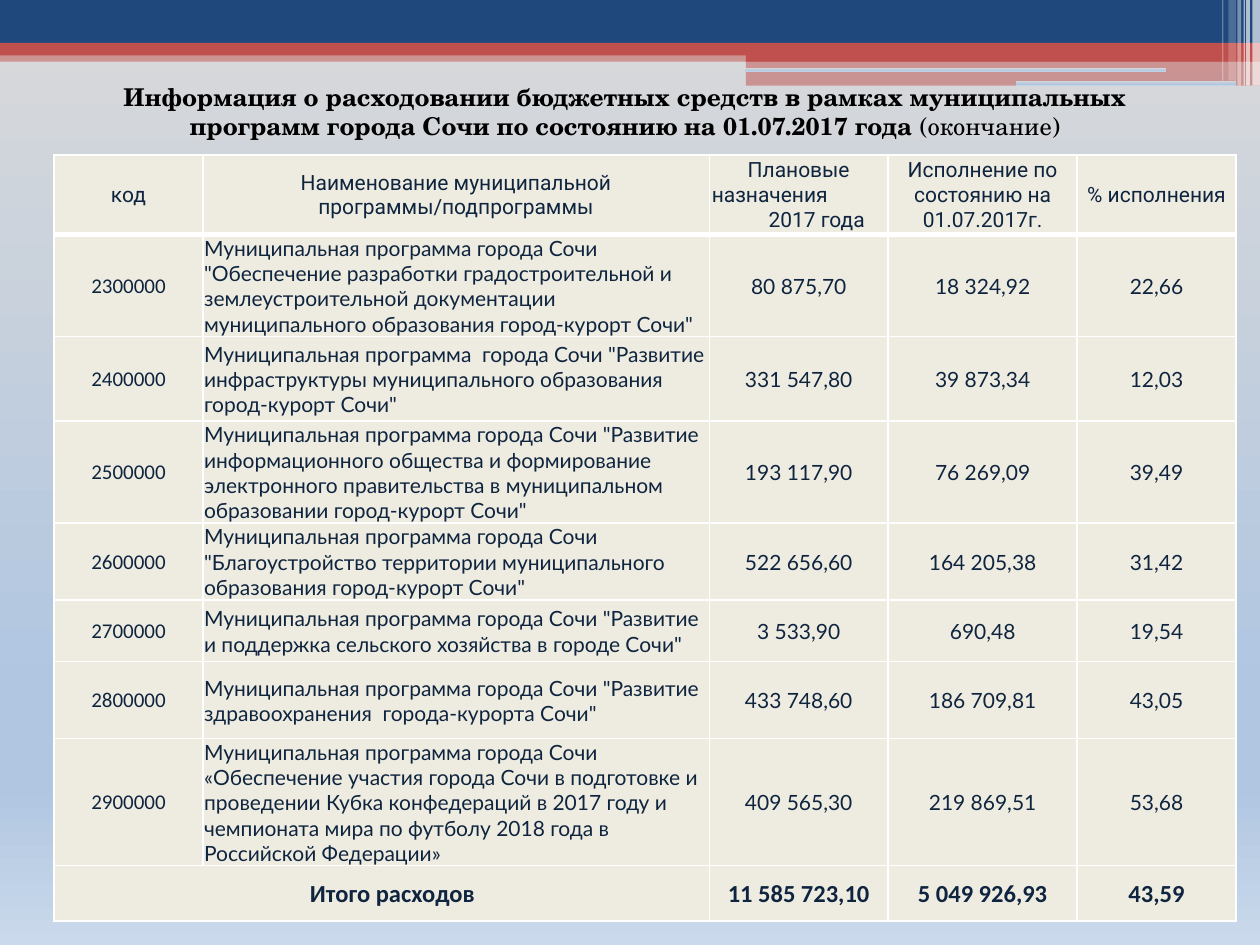
import pptx
import pptx.util
import pptx.dml.color
import pptx.enum.shapes
import pptx.enum.text
import pptx.oxml
import pptx.oxml.ns

RGBColor = pptx.dml.color.RGBColor
NAVY = RGBColor(0x1F, 0x49, 0x7D)
RED = RGBColor(0xC0, 0x50, 0x4D)
WHITE = RGBColor(0xFF, 0xFF, 0xFF)
BLACK = RGBColor(0, 0, 0)
CREAM = RGBColor(0xEE, 0xEC, 0xE1)
INK = RGBColor(0x0F, 0x24, 0x3E)
GRADIENT = [(0, RGBColor(0xD9, 0xD9, 0xD9)), (74, RGBColor(0xB0, 0xC6, 0xE1)),
            (83, RGBColor(0xB0, 0xC6, 0xE1)), (100, RGBColor(0xCA, 0xD9, 0xEB))]

SHAPE = pptx.enum.shapes.MSO_SHAPE
LEFT = pptx.enum.text.PP_ALIGN.LEFT
CENTER = pptx.enum.text.PP_ALIGN.CENTER
MIDDLE = pptx.enum.text.MSO_ANCHOR.MIDDLE
qn = pptx.oxml.ns.qn
NAMESPACE = pptx.oxml.ns.nsdecls("a")

HEADERS = ["код", "Наименование муниципальной программы/подпрограммы", None,
           "Исполнение по состоянию на 01.07.2017г.", "% исполнения"]
# The planned-amounts header is stepped: text, alignment, left indent in inches
PLAN_HEADER = [("Плановые", CENTER, 0), ("назначения", LEFT, 0.01), ("2017 года", LEFT, 0.46)]
PREFIX = "Муниципальная программа города Сочи "
PROGRAMS = [
    ("2300000", PREFIX + '"Обеспечение разработки градостроительной и землеустроительной '
     'документации муниципального образования город-курорт Сочи"', "80 875,70", "18 324,92", "22,66"),
    ("2400000", 'Муниципальная программа  города Сочи "Развитие инфраструктуры муниципального '
     'образования город-курорт Сочи"', "331 547,80", "39 873,34", "12,03"),
    ("2500000", PREFIX + '"Развитие информационного общества и формирование электронного '
     'правительства в муниципальном образовании город-курорт Сочи"',
     "193 117,90", "76 269,09", "39,49"),
    ("2600000", PREFIX + '"Благоустройство территории муниципального образования '
     'город-курорт Сочи"', "522 656,60", "164 205,38", "31,42"),
    ("2700000", PREFIX + '"Развитие и поддержка сельского хозяйства в городе Сочи"',
     "3 533,90", "690,48", "19,54"),
    ("2800000", PREFIX + '"Развитие здравоохранения  города-курорта Сочи"',
     "433 748,60", "186 709,81", "43,05"),
    ("2900000", PREFIX + "«Обеспечение участия города Сочи в подготовке и проведении Кубка "
     "конфедераций в 2017 году и чемпионата мира по футболу 2018 года в Российской Федерации»",
     "409 565,30", "219 869,51", "53,68"),
]
TOTALS = ["Итого расходов", None, "11 585 723,10", "5 049 926,93", "43,59"]


def write(para, text, font="Lato", size=12, color=INK, bold=False, align=CENTER, indent=0):
    """Add one formatted span to a paragraph."""
    para.alignment = align
    if indent:
        para._p.get_or_add_pPr().set("marL", str(pptx.util.Inches(indent)))
    span = para.add_run()
    span.text = text
    span.font.name = font
    span.font.size = pptx.util.Pt(size)
    span.font.bold = bold
    span.font.color.rgb = color


class Builder:
    """Holds the style and the page; lengths are in a grid of 100 columns by 75 rows."""

    def __init__(self, deck):
        self.column = deck.slide_width / 100
        self.row = deck.slide_height / 75
        self.page = deck.slides.add_slide(deck.slide_layouts[5])

    def across(self, columns):
        return round(columns * self.column)

    def down(self, rows):
        return round(rows * self.row)

    def place(self, left, top, width, height):
        return self.across(left), self.down(top), self.across(width), self.down(height)

    def gradient(self, fill, element):
        fill.gradient()
        fill.gradient_angle = 270
        stops = element.find(".//" + qn("a:gsLst"))
        for stop in list(stops):
            stops.remove(stop)
        for position, color in GRADIENT:
            stops.append(pptx.oxml.parse_xml(
                f'<a:gs {NAMESPACE} pos="{position * 1000}"><a:srgbClr val="{color}"/></a:gs>'))

    def background(self):
        self.gradient(self.page.background.fill, self.page._element)

    def bar(self, bounds, color=None, opacity=100, kind=SHAPE.RECTANGLE):
        box = self.page.shapes.add_shape(kind, *self.place(*bounds))
        box.shadow.inherit = False
        box.line.fill.background()
        if color is None:
            self.gradient(box.fill, box._element)
            return
        box.fill.solid()
        box.fill.fore_color.rgb = color
        if opacity < 100:
            tint = box._element.spPr.find(".//" + qn("a:srgbClr"))
            tint.append(pptx.oxml.parse_xml(f'<a:alpha {NAMESPACE} val="{opacity * 1000}"/>'))

    def title(self, bounds, strong, plain):
        box = self.page.shapes.title
        box.left, box.top, box.width, box.height = self.place(*bounds)
        frame = box.text_frame
        frame.word_wrap = True
        frame.auto_size = pptx.enum.text.MSO_AUTO_SIZE.NONE
        frame.vertical_anchor = pptx.enum.text.MSO_ANCHOR.TOP
        style = dict(font="TeX Gyre Schola", size=14, color=BLACK)
        write(frame.paragraphs[0], strong, bold=True, **style)
        write(frame.paragraphs[0], plain, **style)

    def table(self, left, top, columns, rows):
        bounds = self.place(left, top, sum(columns), sum(rows))
        table = self.page.shapes.add_table(len(rows), len(columns), *bounds).table
        table.first_row = table.horz_banding = False
        for track, size in zip(table.columns, columns):
            track.width = self.across(size)
        for track, size in zip(table.rows, rows):
            track.height = self.down(size)
        for index in range(len(rows)):
            for cell in table.rows[index].cells:
                self.dress(cell, top=3 if index == 1 else 1, bottom=3 if index == 0 else 1)
        return table

    def dress(self, cell, top, bottom):
        cell.fill.solid()
        cell.fill.fore_color.rgb = CREAM
        cell.vertical_anchor = MIDDLE
        cell.margin_left = cell.margin_right = cell.margin_top = pptx.util.Inches(0.01)
        cell.margin_bottom = 0
        sides = {"lnL": 1, "lnR": 1, "lnT": top, "lnB": bottom}
        for index, (side, width) in enumerate(sides.items()):
            cell._tc.get_or_add_tcPr().insert(index, pptx.oxml.parse_xml(
                f'<a:{side} {NAMESPACE} w="{pptx.util.Pt(width)}"><a:solidFill>'
                f'<a:srgbClr val="{WHITE}"/></a:solidFill></a:{side}>'))


def fill_table(table):
    # Header row
    for column, text in enumerate(HEADERS):
        if text:
            write(table.cell(0, column).text_frame.paragraphs[0], text, font="Roboto")
    frame = table.cell(0, 2).text_frame
    for index, (text, align, indent) in enumerate(PLAN_HEADER):
        para = frame.add_paragraph() if index else frame.paragraphs[0]
        write(para, text, font="Roboto", align=align, indent=indent)

    # One row for each program
    for row, program in enumerate(PROGRAMS, 1):
        for column, text in enumerate(program):
            write(table.cell(row, column).text_frame.paragraphs[0], text,
                  font="Lato" if column else "Calibri", align=LEFT if column == 1 else CENTER)

    # Totals
    last = len(PROGRAMS) + 1
    table.cell(last, 0).merge(table.cell(last, 1))
    for column, text in enumerate(TOTALS):
        if text:
            write(table.cell(last, column).text_frame.paragraphs[0], text, font="Calibri",
                  size=14, bold=True, indent=0 if column else 0.17)


def main():
    deck = pptx.Presentation()
    deck.slide_width = pptx.util.Inches(10)
    deck.slide_height = pptx.util.Inches(7.5)
    builder = Builder(deck)
    builder.background()

    # Header bands
    builder.bar((0, 4, 100, 0.9), RED, 50)
    builder.bar((0, 0, 100, 3.4), NAVY)
    builder.bar((0, 3.4, 100, 1), RED)
    builder.bar((59.2, 3.9, 40.8, 1), RED)
    builder.bar((59.2, 4.8, 40.8, 2), RED, 50)
    for bounds in [(59.1, 5.4, 33.5, 0.3), (80.6, 6.4, 17.5, 0.4)]:
        builder.bar(bounds, kind=SHAPE.ROUNDED_RECTANGLE)

    # Corner stripes: left, width, height, opacity
    for left, width, height, opacity in [
            (99.4, 0.6, 6.8, 65), (98.9, 0.3, 6.8, 65), (98.7, 0.1, 6.8, 60),
            (98.2, 0.3, 6.8, 40), (97.5, 0.6, 6.4, 20), (97, 0.1, 6.4, 30)]:
        builder.bar((left, 0, width, height), WHITE, opacity)

    # Title and spending table
    builder.title((5.1, 6, 89, 5.7), "Информация о расходовании бюджетных средств в рамках "
                  "муниципальных программ города Сочи по состоянию на 01.07.2017 года ",
                  "(окончание)")
    fill_table(builder.table(4.3, 12.3, columns=[11.8, 40.2, 14.2, 15, 12.6],
                             rows=[6.3, 8, 6.7, 8.1, 6.1, 4.9, 6.1, 10.1, 4.4]))
    deck.save("out.pptx")


if __name__ == "__main__":
    main()
